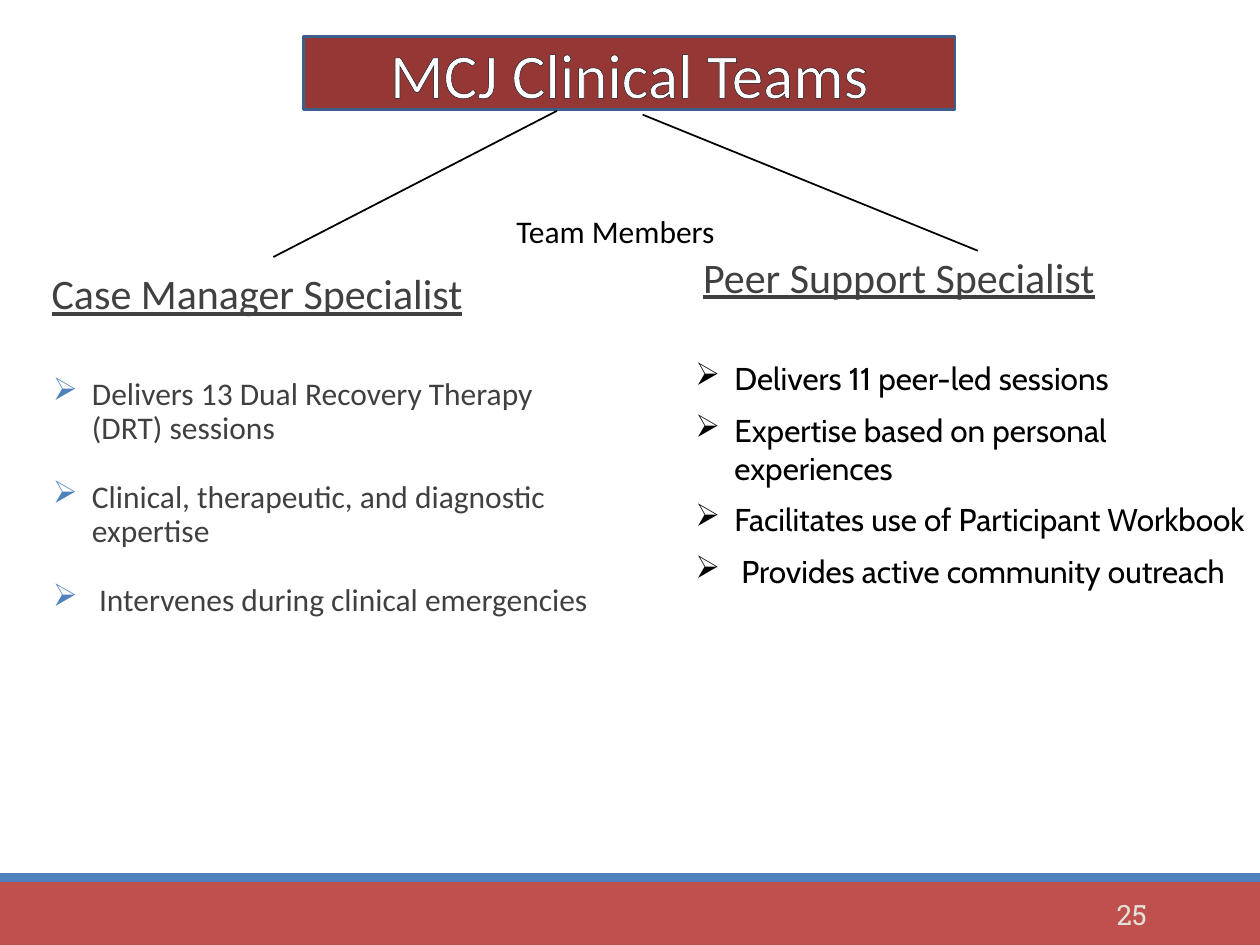
from dataclasses import dataclass

from lxml.etree import SubElement
from pptx import Presentation
from pptx.dml.color import RGBColor
from pptx.enum.shapes import MSO_CONNECTOR, MSO_SHAPE
from pptx.enum.text import MSO_ANCHOR, PP_ALIGN
from pptx.oxml.ns import qn
from pptx.util import Inches, Pt


@dataclass(frozen=True)
class Theme:
    red: str = "C0504D"
    blue: str = "4F81BD"
    maroon: str = "953735"
    title_line: str = "3A5F8C"
    title_outline: str = "08121F"
    white: str = "FFFFFF"
    black: str = "000000"
    gray: str = "404040"
    cream: str = "E3E1D7"
    title_size: int = 36
    heading_size: int = 24
    body_size: int = 18
    number_size: int = 16
    main_font: str = "Calibri"
    peer_font: str = "Cabin"
    number_font: str = "Roboto Slab"


theme = Theme()


def add_rectangle(box, color):
    shape = slide.shapes.add_shape(MSO_SHAPE.RECTANGLE, *map(Inches, box))
    shape.shadow.inherit = False
    shape.fill.solid()
    shape.fill.fore_color.rgb = RGBColor.from_string(color)
    shape.line.fill.background()
    return shape


def write_text(shape, lines, size, color, font=theme.main_font, inset=0.1, align=PP_ALIGN.LEFT,
               underline=None, line_spacing=None, before=0, after=0, indent=0, bullet_color=None):
    frame = shape.text_frame
    frame.word_wrap = True
    frame.margin_left = frame.margin_right = Inches(inset)
    frame.text = "\n".join(lines)
    for paragraph in frame.paragraphs:
        paragraph.alignment = align
        paragraph.line_spacing = line_spacing
        paragraph.space_before = Pt(before)
        paragraph.space_after = Pt(after)
        paragraph.font.name = font
        paragraph.font.size = Pt(size)
        paragraph.font.underline = underline
        paragraph.font.color.rgb = RGBColor.from_string(color)
        if bullet_color:
            properties = paragraph._p.get_or_add_pPr()
            properties.set("marL", str(Inches(indent)))
            properties.set("indent", str(-Inches(indent)))
            default_run = properties.find(qn("a:defRPr"))
            bullet_fill = SubElement(properties, qn("a:buClr"))
            SubElement(bullet_fill, qn("a:srgbClr"), val=bullet_color)
            SubElement(properties, qn("a:buChar"), char="➢")
            properties.append(default_run)


presentation = Presentation()
presentation.slide_width = Inches(10)
presentation.slide_height = Inches(7.5)
slide = presentation.slides.add_slide(presentation.slide_layouts[6])

add_rectangle((0, 7, 10, 0.5), theme.red)
add_rectangle((0, 6.93, 10, 0.07), theme.blue)

title = add_rectangle((2.41, 0.29, 5.17, 0.58), theme.maroon)
title.line.color.rgb = RGBColor.from_string(theme.title_line)
title.line.width = Pt(1.25)
title.text_frame.vertical_anchor = MSO_ANCHOR.MIDDLE
write_text(title, ["MCJ Clinical Teams"], theme.title_size, theme.white, align=PP_ALIGN.CENTER)
title_run = title.text_frame.paragraphs[0].runs[0]
title_run.font.fill.solid()
title_run.font.fill.fore_color.rgb = RGBColor.from_string(theme.white)
outline = title_run._r.get_or_add_rPr().makeelement(qn("a:ln"), {"w": str(Pt(1.45))})
outline_fill = SubElement(outline, qn("a:solidFill"))
SubElement(outline_fill, qn("a:srgbClr"), val=theme.title_outline)
title_run._r.get_or_add_rPr().insert(0, outline)

number = slide.shapes.add_textbox(Inches(8.12), Inches(7.06), Inches(1.08), Inches(0.4))
number.text_frame.vertical_anchor = MSO_ANCHOR.MIDDLE
write_text(number, ["25"], theme.number_size, theme.cream, theme.number_font, align=PP_ALIGN.RIGHT)

for heading, left, top, width in (
    ("Case Manager Specialist", 0.41, 2.12, 4),
    ("Peer Support Specialist", 5.58, 1.99, 4.42),
):
    box = slide.shapes.add_textbox(Inches(left), Inches(top), Inches(width), Inches(0.7))
    write_text(box, [heading], theme.heading_size, theme.gray, inset=0, underline=True,
               line_spacing=0.9, before=12, after=2)

case_manager = slide.shapes.add_textbox(Inches(0.42), Inches(2.95), Inches(4.42), Inches(4.31))
write_text(case_manager, [
    "Delivers 13 Dual Recovery Therapy (DRT) sessions",
    "Clinical, therapeutic, and diagnostic expertise",
    " Intervenes during clinical emergencies",
], theme.body_size, theme.gray, inset=0, line_spacing=0.9, before=12, after=8,
    indent=0.31, bullet_color=theme.blue)

peer_support = slide.shapes.add_textbox(Inches(5.42), Inches(2.8), Inches(4.58), Inches(2.64))
write_text(peer_support, [
    "Delivers 11 peer-led sessions",
    "Expertise based on personal experiences",
    "Facilitates use of Participant Workbook",
    " Provides active community outreach",
], theme.body_size, theme.black, theme.peer_font, after=8, indent=0.31, bullet_color=theme.black)

for ends in ((2.17, 2.04, 4.42, 0.88), (7.76, 1.99, 5.1, 0.91)):
    branch = slide.shapes.add_connector(MSO_CONNECTOR.STRAIGHT, *map(Inches, ends))
    branch.line.color.rgb = RGBColor.from_string(theme.black)
    branch.line.width = Pt(1)
    SubElement(branch._element.spPr, qn("a:effectLst"))

members = slide.shapes.add_textbox(Inches(4), Inches(1.63), Inches(2.17), Inches(0.41))
write_text(members, ["Team Members"], theme.body_size, theme.black)

presentation.save("out.pptx")
